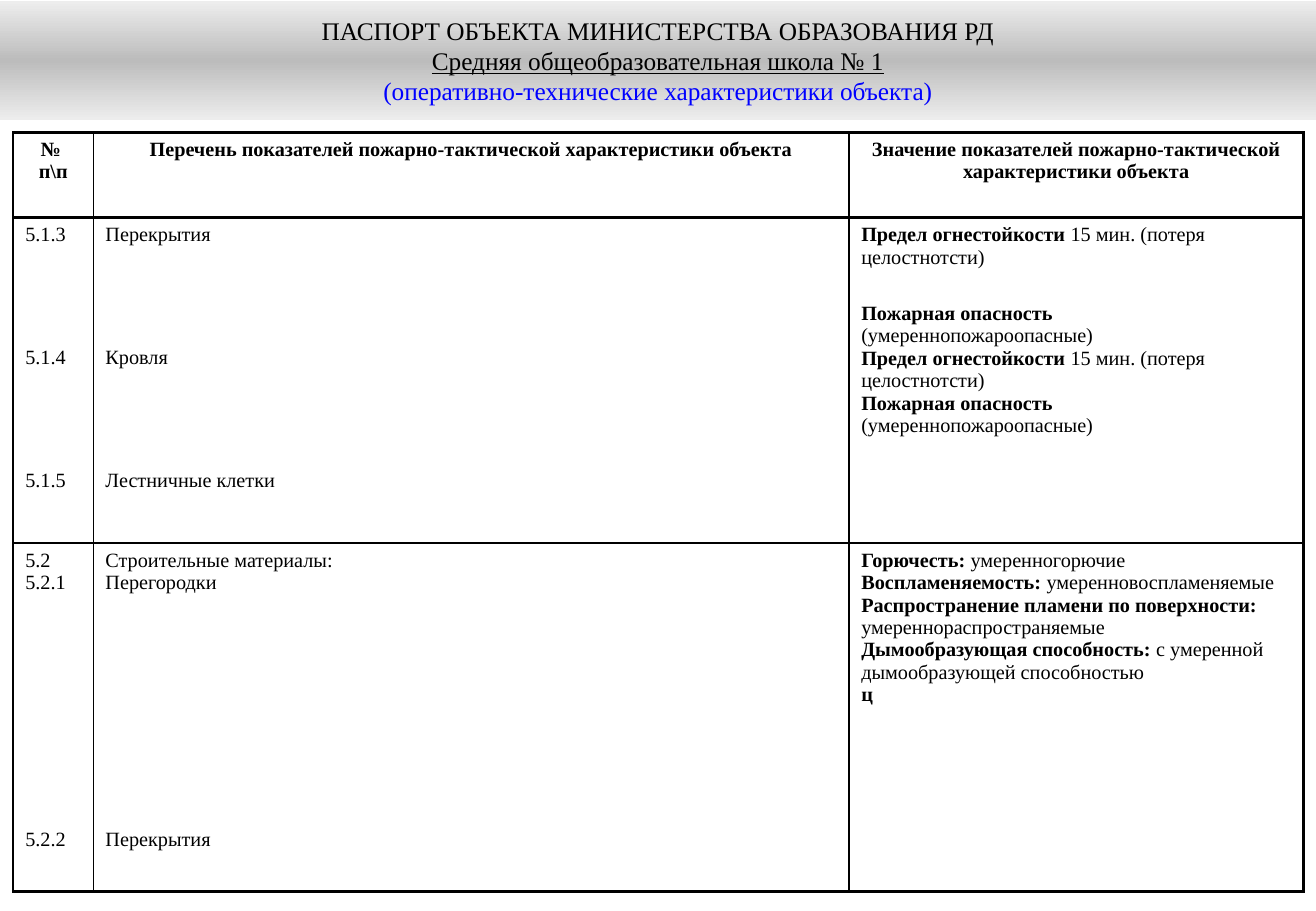
from copy import deepcopy
from dataclasses import dataclass

from lxml import etree
from pptx import Presentation
from pptx import util as u
from pptx.dml import color
from pptx.enum import shapes, text
from pptx.oxml import ns


@dataclass(frozen=True)
class Theme:
    font: str = "Times New Roman"
    ink: str = "000000"
    accent: str = "0000FF"
    banner_stops: tuple = ((0, "EDEDED"), (50, "BCBCBC"), (100, "EDEDED"))
    title_size: float = 15
    body_size: float = 12
    outer_line: float = 1.5
    inner_line: float = 1


THEME = Theme()
WIDTH, HEIGHT = u.Inches(10.83), u.Inches(7.5)
COLUMNS = (0.66, 6.22, 3.74)
ROWS = (0.7, 2.68, 2.87)

TITLE = (
    ("ПАСПОРТ ОБЪЕКТА МИНИСТЕРСТВА ОБРАЗОВАНИЯ РД", THEME.ink, False),
    ("Средняя общеобразовательная школа № 1", THEME.ink, True),
    ("(оперативно-технические характеристики объекта)", THEME.accent, False),
)

HEADINGS = (
    ("№ ", "п\\п"),
    ("Перечень показателей пожарно-тактической характеристики объекта",),
    ("Значение показателей пожарно-тактической характеристики объекта",),
)

STRUCTURE_GAP, MATERIAL_GAP, HAZARD_GAP = 59.5, 139, 20
FIRE_LIMIT = ("Предел огнестойкости ", "15 мин. (потеря целостнотсти)")
HAZARD = ("Пожарная опасность", "")
HAZARD_LEVEL = ("", "(умереннопожароопасные)")


def plain(*lines):
    return [(gap, "", line) for gap, line in lines]


BODY = (
    (
        plain((0, "5.1.3"), (STRUCTURE_GAP, "5.1.4"), (STRUCTURE_GAP, "5.1.5")),
        plain((0, "Перекрытия"), (STRUCTURE_GAP, "Кровля"),
              (STRUCTURE_GAP, "Лестничные клетки")),
        [(0, *FIRE_LIMIT), (HAZARD_GAP, *HAZARD), (0, *HAZARD_LEVEL),
         (0, *FIRE_LIMIT), (0, *HAZARD), (0, *HAZARD_LEVEL)],
    ),
    (
        plain((0, "5.2"), (0, "5.2.1"), (MATERIAL_GAP, "5.2.2")),
        plain((0, "Строительные материалы:"), (0, "Перегородки"),
              (MATERIAL_GAP, "Перекрытия")),
        [(0, "Горючесть:", " умеренногорючие"),
         (0, "Воспламеняемость: ", "умеренновоспламеняемые"),
         (0, "Распространение пламени по поверхности:", ""),
         (0, "", "умереннораспространяемые"),
         (0, "Дымообразующая способность: ",
          "с умеренной дымообразующей способностью"),
         (0, "ц", "")],
    ),
)


def next_paragraph(tf, index):
    return tf.add_paragraph() if index else tf.paragraphs[0]


def add_run(p, words, size, rgb=THEME.ink, bold=False, underline=False):
    r = p.add_run()
    r.text = words
    r.font.name = THEME.font
    r.font.size = u.Pt(size)
    r.font.bold = bold
    r.font.underline = underline
    r.font.color.rgb = color.RGBColor.from_string(rgb)


def fill_gradient(sp, stops):
    sp.fill.gradient()
    sp.fill.gradient_angle = 90
    stop_list = sp._element.spPr.find(".//" + ns.qn("a:gsLst"))
    stop_list.append(deepcopy(stop_list[0]))
    for stop, (position, rgb) in zip(sp.fill.gradient_stops, stops):
        stop.position = position / 100
        stop.color.rgb = color.RGBColor.from_string(rgb)


def add_banner(slide):
    sp = slide.shapes.add_shape(shapes.MSO_SHAPE.RECTANGLE, 0, u.Inches(0.01),
                                WIDTH, int(HEIGHT * 0.13))
    sp.shadow.inherit = False
    sp.line.fill.background()
    fill_gradient(sp, THEME.banner_stops)
    tf = sp.text_frame
    tf.word_wrap = True
    tf.vertical_anchor = text.MSO_ANCHOR.MIDDLE
    for index, (words, rgb, underline) in enumerate(TITLE):
        p = next_paragraph(tf, index)
        p.alignment = text.PP_ALIGN.CENTER
        add_run(p, words, THEME.title_size, rgb, underline=underline)


def write_cell(cell, lines, alignment):
    tf = cell.text_frame
    for index, (gap, label, value) in enumerate(lines):
        p = next_paragraph(tf, index)
        p.alignment = alignment
        p.space_before = u.Pt(gap)
        for words, bold in ((label, True), (value, False)):
            if words:
                add_run(p, words, THEME.body_size, bold=bold)


def set_borders(cell, widths):
    tc_pr = cell._tc.get_or_add_tcPr()
    for index, (side, width) in enumerate(zip("LRTB", widths)):
        ln = etree.Element(ns.qn(f"a:ln{side}"), w=str(u.Pt(width)))
        solid = etree.SubElement(ln, ns.qn("a:solidFill"))
        etree.SubElement(solid, ns.qn("a:srgbClr"), val=THEME.ink)
        tc_pr.insert(index, ln)


def border_widths(row, column):
    heavy = (column == 0, column == len(COLUMNS) - 1,
             row <= 1, row in (0, len(ROWS) - 1))
    return [THEME.outer_line if edge else THEME.inner_line for edge in heavy]


def add_passport_table(slide):
    frame = slide.shapes.add_table(
        len(ROWS), len(COLUMNS), int(WIDTH * 0.01), u.Inches(1.09),
        u.Inches(sum(COLUMNS)), u.Inches(sum(ROWS)))
    table = frame.table
    table.first_row = table.horz_banding = False
    for column, width in zip(table.columns, COLUMNS):
        column.width = u.Inches(width)
    for row, height in zip(table.rows, ROWS):
        row.height = u.Inches(height)
    header = [[(0, words, "") for words in lines] for lines in HEADINGS]
    for row, contents in enumerate((header, *BODY)):
        alignment = text.PP_ALIGN.LEFT if row else text.PP_ALIGN.CENTER
        for column, lines in enumerate(contents):
            cell = table.cell(row, column)
            cell.fill.background()
            write_cell(cell, lines, alignment)
            set_borders(cell, border_widths(row, column))


def main():
    prs = Presentation()
    prs.slide_width, prs.slide_height = WIDTH, HEIGHT
    slide = prs.slides.add_slide(prs.slide_layouts[6])
    add_passport_table(slide)
    add_banner(slide)
    prs.save("out.pptx")


if __name__ == "__main__":
    main()
